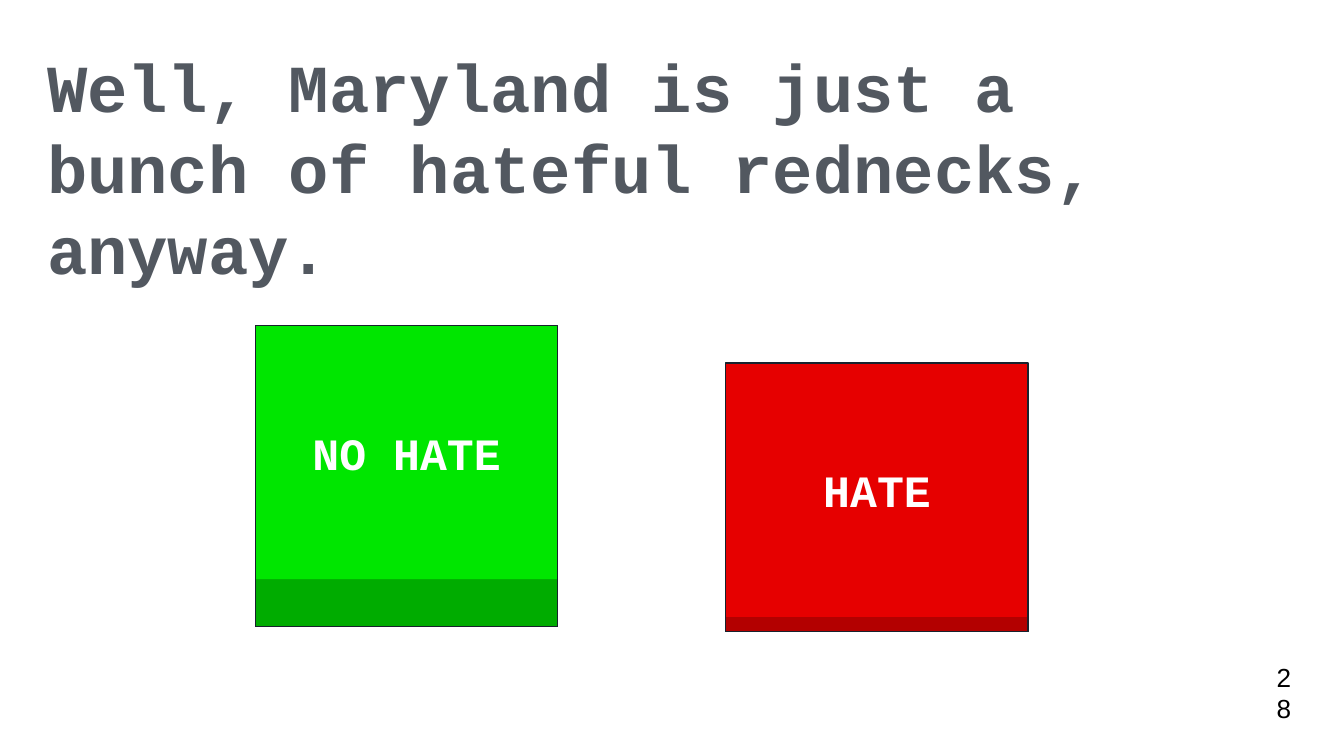
from dataclasses import dataclass

from pptx import Presentation
from pptx.dml.color import RGBColor
from pptx.enum.shapes import MSO_SHAPE
from pptx.enum.text import MSO_ANCHOR, MSO_AUTO_SIZE, PP_ALIGN
from pptx.shapes.autoshape import Shape
from pptx.slide import Slide
from pptx.text.text import TextFrame
from pptx.util import Inches, Pt


@dataclass(frozen=True)
class Theme:
    mono: str = "Courier New"
    sans: str = "Arial"
    heading: str = "525860"
    label: str = "FFFFFF"
    number: str = "000000"
    outline: str = "18222D"
    heading_size: int = 36
    label_size: int = 24
    number_size: int = 14
    outline_width: float = 0.75


@dataclass(frozen=True)
class Button:
    label: str
    left: float
    top: float
    depth: float
    face: str
    side: str


THEME = Theme()
FACE_WIDTH, FACE_HEIGHT = 2.25, 1.89
BUTTONS = (
    Button("NO HATE", 1.9, 2.42, 0.35, "00E600", "00AC00"),
    Button("HATE", 5.4, 2.7, 0.11, "E60000", "B30000"),
)


def write_text(frame: TextFrame, wording: str, font: str, size: int, color: str,
               bold: bool = False, align: PP_ALIGN = PP_ALIGN.LEFT,
               anchor: MSO_ANCHOR = MSO_ANCHOR.MIDDLE, inset: float = 0.1) -> None:
    frame_format = {
        "word_wrap": True,
        "auto_size": MSO_AUTO_SIZE.NONE,
        "vertical_anchor": anchor,
        "margin_left": Inches(inset),
        "margin_right": Inches(inset),
        "margin_top": Inches(inset),
        "margin_bottom": Inches(inset),
    }
    for key, setting in frame_format.items():
        setattr(frame, key, setting)
    frame.text = wording
    paragraph = frame.paragraphs[0]
    paragraph.alignment = align
    run_font = paragraph.runs[0].font
    for key, setting in {"name": font, "size": Pt(size), "bold": bold}.items():
        setattr(run_font, key, setting)
    run_font.color.rgb = RGBColor.from_string(color)


def add_panel(slide: Slide, left: float, top: float, height: float,
              fill: str | None = None, outlined: bool = True) -> Shape:
    panel = slide.shapes.add_shape(
        MSO_SHAPE.RECTANGLE, Inches(left), Inches(top), Inches(FACE_WIDTH), Inches(height))
    panel.shadow.inherit = False
    if fill:
        panel.fill.solid()
        panel.fill.fore_color.rgb = RGBColor.from_string(fill)
    else:
        panel.fill.background()
    if outlined:
        panel.line.color.rgb = RGBColor.from_string(THEME.outline)
        panel.line.width = Pt(THEME.outline_width)
    else:
        panel.line.fill.background()
    return panel


def add_button(slide: Slide, button: Button) -> None:
    add_panel(slide, button.left, button.top + button.depth, FACE_HEIGHT, button.side)
    face = add_panel(slide, button.left, button.top, FACE_HEIGHT, button.face, outlined=False)
    write_text(face.text_frame, button.label, THEME.mono, THEME.label_size, THEME.label,
               bold=True, align=PP_ALIGN.CENTER)
    add_panel(slide, button.left, button.top, FACE_HEIGHT + button.depth)


def add_heading(slide: Slide, wording: str) -> None:
    heading = slide.shapes.title
    bounds = {"left": 0.29, "top": 0.28, "width": 9.1, "height": 0.88}
    for key, length in bounds.items():
        setattr(heading, key, Inches(length))
    write_text(heading.text_frame, wording, THEME.mono, THEME.heading_size, THEME.heading,
               bold=True, anchor=MSO_ANCHOR.TOP, inset=0.06)
    heading.text_frame.paragraphs[0].space_after = Pt(10)


def add_page_number(slide: Slide, wording: str) -> None:
    page_number = slide.shapes.add_textbox(
        Inches(9.4), Inches(5.05), Inches(0.25), Inches(0.21))
    write_text(page_number.text_frame, wording, THEME.sans, THEME.number_size, THEME.number)


def main() -> None:
    deck = Presentation()
    deck.slide_width = Inches(10)
    deck.slide_height = deck.slide_width * 9 // 16
    slide = deck.slides.add_slide(deck.slide_layouts.get_by_name("Title Only"))
    add_heading(slide, "Well, Maryland is just a bunch of hateful rednecks, anyway.")
    add_page_number(slide, "28")
    for button in BUTTONS:
        add_button(slide, button)
    deck.save("out.pptx")


if __name__ == "__main__":
    main()
